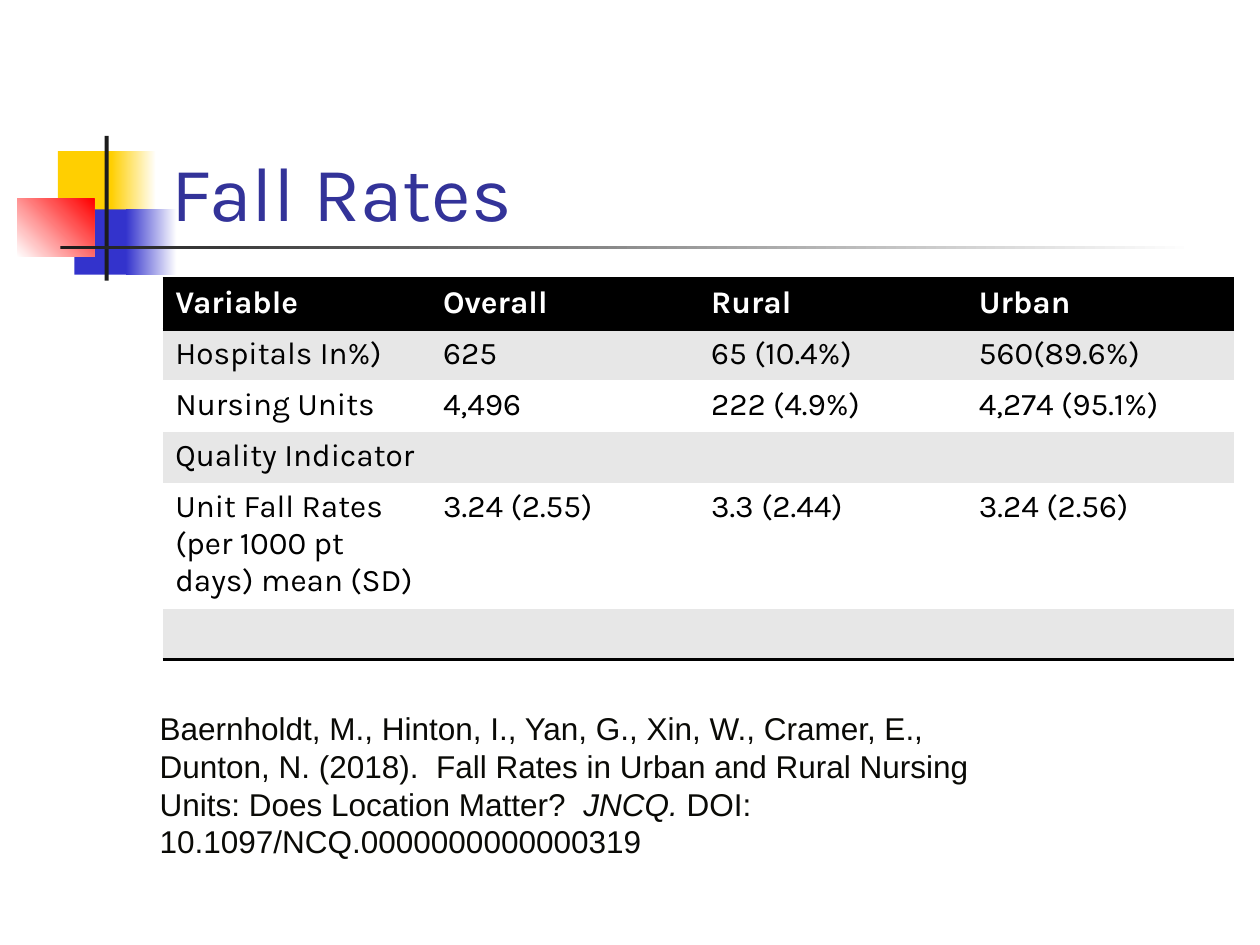
from dataclasses import dataclass

from pptx import Presentation, util as u
from pptx.dml import color
from pptx.enum import shapes, text
from pptx.oxml import parse_xml
from pptx.oxml import ns

Cm, Pt, rgb = u.Cm, u.Pt, color.RGBColor.from_string


@dataclass
class Theme:
    gold: str = "FFCF01"
    blue: str = "3333CC"
    red: str = "FF0000"
    dark: str = "1C1C1C"
    white: str = "FFFFFF"
    black: str = "000000"
    band: str = "E7E7E7"
    title: str = "333399"
    cite: str = "0A0A06"
    face: str = "Karla"
    sans: str = "Arial"
    big: int = 44
    body: int = 18


th = Theme()


def style(para, face, size, tint, bold=False):
    for run in para.runs:
        run.font.name, run.font.size, run.font.bold = face, Pt(size), bold
        run.font.color.rgb = rgb(tint)


def rule(cell, side):
    """Draw a 2 pt black line on the top (T) or bottom (B) of a cell."""
    line = parse_xml(
        f'<a:ln{side} {ns.nsdecls("a")} w="25400"><a:solidFill>'
        f'<a:srgbClr val="{th.black}"/></a:solidFill></a:ln{side}>')
    props = cell._tc.get_or_add_tcPr()
    props.insert(len(props) - 1, line)


prs = Presentation()
prs.slide_width, prs.slide_height = Cm(25.4), Cm(19.05)
slide = prs.slides.add_slide(prs.slide_layouts[6])

# Corner ornament: left, top, width, height, start, end colour, angle
blocks = [
    (1.17, 3.05, 1.22, 1.32, th.gold, None, 0),
    (2.24, 3.05, 0.91, 1.32, th.gold, th.white, 0),
    (1.5, 4.22, 1.17, 1.32, th.blue, None, 0),
    (2.54, 4.22, 1.02, 1.32, th.blue, th.white, 0),
    (0.35, 4.01, 1.55, 1.17, th.white, th.red, 45),
    (2.11, 2.74, 0.08, 2.92, th.dark, None, 0),
    (1.22, 4.95, 22.86, 0.08, th.dark, th.white, 0),
]
for *box, start, end, angle in blocks:
    block = slide.shapes.add_shape(
        shapes.MSO_SHAPE.RECTANGLE, *[Cm(n) for n in box])
    block.shadow.inherit = False
    block.line.fill.background()
    if end:
        block.fill.gradient()
        block.fill.gradient_angle = angle
        for stop, tint in zip(block.fill.gradient_stops, (start, end)):
            stop.color.rgb = rgb(tint)
    else:
        block.fill.solid()
        block.fill.fore_color.rgb = rgb(start)

# Title
title = slide.shapes.add_textbox(Cm(3.2), Cm(1.73), Cm(21.64), Cm(3.18))
frame = title.text_frame
frame.word_wrap = True
frame.vertical_anchor = text.MSO_ANCHOR.BOTTOM
frame.text = "Fall Rates"
style(frame.paragraphs[0], th.face, th.big, th.title)

# Table of rates
rows = [
    ("Variable", "Overall", "Rural", "Urban"),
    ("Hospitals In%)", "625", "65 (10.4%)", "560(89.6%)"),
    ("Nursing Units", "4,496", "222 (4.9%)", "4,274 (95.1%)"),
    ("Quality Indicator", "", "", ""),
    ("Unit Fall Rates (per 1000 pt days) mean (SD)",
     "3.24 (2.55)", "3.3 (2.44)", "3.24 (2.56)"),
    ("", "", "", ""),
]
last = len(rows) - 1
grid = slide.shapes.add_table(
    len(rows), 4, Cm(3.28), Cm(5.61), Cm(21.6), Cm(1.03 * len(rows))).table
grid.horz_banding = False
# "No Style, No Grid" keeps the cells free of inner lines
grid._tbl.tblPr[0].text = "{2D5ABB26-0587-4C30-8999-92F81FD0307C}"
for r, row in enumerate(rows):
    head = r == 0
    fill = th.black if head else th.band if r % 2 else th.white
    for c, word in enumerate(row):
        cell = grid.cell(r, c)
        cell.fill.solid()
        cell.fill.fore_color.rgb = rgb(fill)
        cell.text = word
        style(cell.text_frame.paragraphs[0], th.face, th.body,
              th.white if head else th.black, head)
        if head:
            rule(cell, "T")
        if head or r == last:
            rule(cell, "B")

# Citation
cite = slide.shapes.add_textbox(Cm(2.97), Cm(14.17), Cm(18.21), Cm(4.11))
frame = cite.text_frame
frame.word_wrap = True
frame.auto_size = text.MSO_AUTO_SIZE.SHAPE_TO_FIT_TEXT
para = frame.paragraphs[0]
parts = [
    "Baernholdt, M., Hinton, I., Yan, G., Xin, W., Cramer, E.,  "
    "Dunton, N. (2018).  Fall Rates in Urban and Rural Nursing Units: "
    "Does Location Matter?  ",
    "JNCQ. ",
    "DOI: 10.1097/NCQ.0000000000000319",
]
for part in parts:
    para.add_run().text = part
style(para, th.sans, th.body, th.cite)
para.runs[1].font.italic = True

prs.save("out.pptx")
